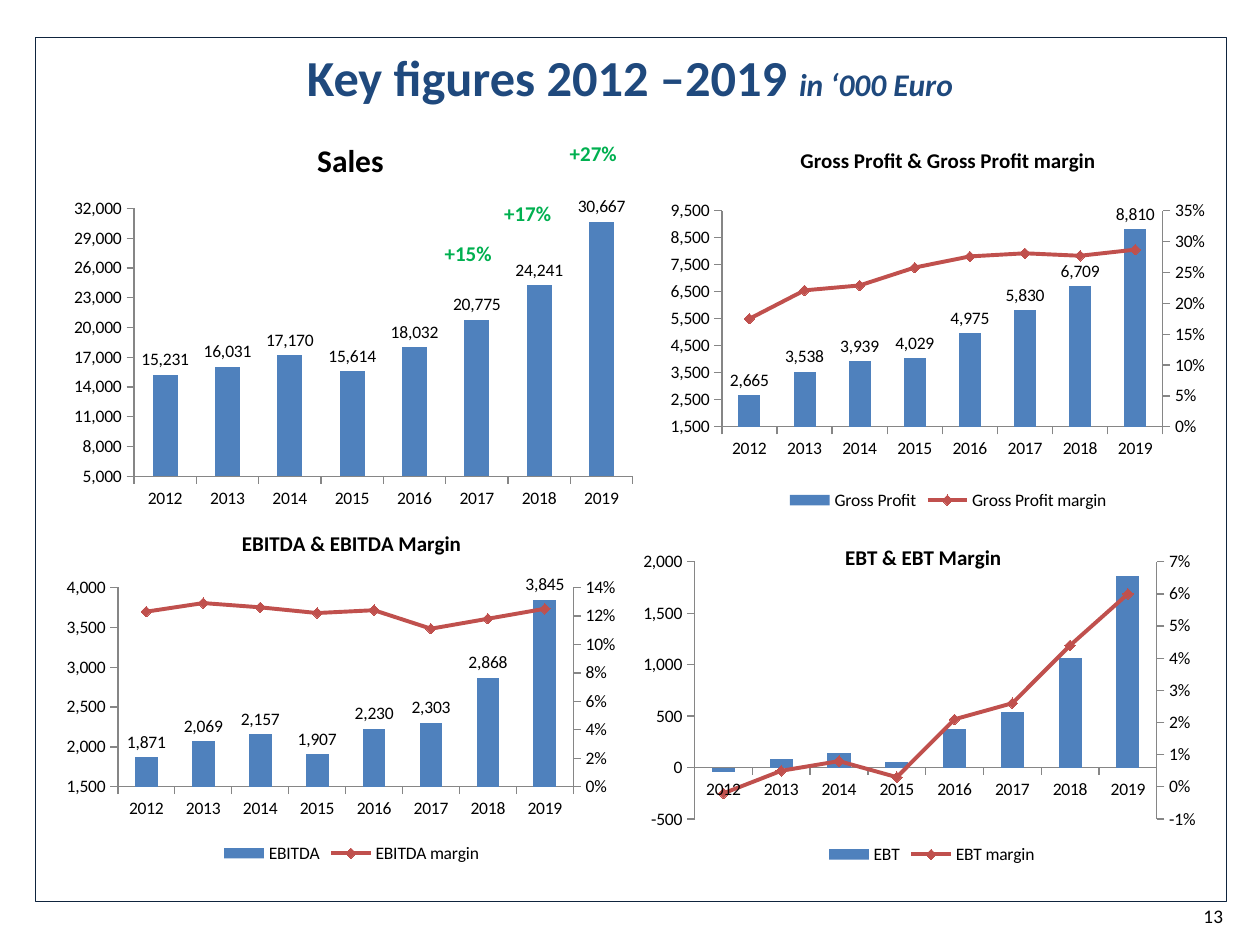
from pptx import Presentation
from pptx.chart.axis import ValueAxis
from pptx.chart.data import CategoryChartData
from pptx.dml.color import RGBColor
from pptx.enum.chart import (XL_CHART_TYPE, XL_LABEL_POSITION,
                             XL_LEGEND_POSITION, XL_MARKER_STYLE)
from pptx.enum.shapes import MSO_SHAPE
from pptx.enum.text import MSO_ANCHOR, MSO_AUTO_SIZE, PP_ALIGN
from pptx.oxml import parse_xml
from pptx.oxml.ns import nsdecls, qn
from pptx.util import Pt

FONT = "Calibri"
YEARS = [str(year) for year in range(2012, 2020)]
INNER = (0.107, 0.213, 0.766, 0.559)
BLUE, RED, GREY = "4F81BD", "C0504D", "868686"

RIGHT_AXES = (
    """<c:valAx %s><c:axId val="9002"/>
    <c:scaling><c:orientation val="minMax"/></c:scaling><c:delete val="0"/>
    <c:axPos val="r"/><c:numFmt formatCode="0%%" sourceLinked="0"/>
    <c:majorTickMark val="out"/><c:minorTickMark val="none"/>
    <c:tickLblPos val="nextTo"/><c:crossAx val="9001"/>
    <c:crosses val="max"/></c:valAx>""",
    """<c:catAx %s><c:axId val="9001"/>
    <c:scaling><c:orientation val="minMax"/></c:scaling><c:delete val="1"/>
    <c:axPos val="b"/><c:crossAx val="9002"/></c:catAx>""",
)
LINE_PLOT = """<c:lineChart %s><c:grouping val="standard"/>
    <c:varyColors val="0"/><c:marker val="1"/>
    <c:axId val="9001"/><c:axId val="9002"/></c:lineChart>"""


def color(code):
    return RGBColor.from_string(code)


def style(font, size, code, bold=False, italic=False):
    font.name, font.size = FONT, Pt(size)
    font.bold, font.italic = bold, italic
    font.color.rgb = color(code)


def make(xml):
    return parse_xml(xml % nsdecls("c"))


def arrange(parent, index, spot, inner=False):
    """Give a chart part a manual layout, as shares of the chart's box."""
    old = parent.find(qn("c:layout"))
    if old is not None:
        parent.remove(old)
    target = '<c:layoutTarget val="inner"/>' if inner else ""
    modes = "".join(f'<c:{k}Mode val="edge"/>' for k in "xy")
    sizes = "".join(f'<c:{k} val="{v}"/>' for k, v in zip("xywh", spot))
    parent.insert(index, make("<c:layout %s><c:manualLayout>" + target + modes
                              + sizes + "</c:manualLayout></c:layout>"))


def scale(axis, low, high, step):
    axis.minimum_scale, axis.maximum_scale = low, high
    axis.major_unit = step
    axis.has_major_gridlines = False


def rule(axis):
    axis.format.line.color.rgb = color(GREY)
    axis.format.line.width = Pt(0.75)


def add_margin(chart, span):
    """Turn the second series into a line on a right-hand axis."""
    area = chart.plots[0]._element.getparent()
    bars = area.find(qn("c:barChart"))
    ser = bars.findall(qn("c:ser"))[1]
    invert = ser.find(qn("c:invertIfNegative"))
    if invert is not None:
        ser.remove(invert)
    plot = make(LINE_PLOT)
    plot.insert(2, ser)
    bars.addnext(plot)
    last = area.findall(qn("c:valAx"))[-1]
    for xml in reversed(RIGHT_AXES):
        last.addnext(make(xml))
    right = ValueAxis(area.findall(qn("c:valAx"))[-1])
    scale(right, *span)
    rule(right)

    line = chart.plots[1].series[0]
    line.smooth = False
    line.format.line.color.rgb = color(RED)
    line.format.line.width = Pt(2.25)
    line.marker.style, line.marker.size = XL_MARKER_STYLE.DIAMOND, 6
    line.marker.format.fill.solid()
    line.marker.format.fill.fore_color.rgb = color(RED)
    line.marker.format.line.color.rgb = color(RED)


def add_figure(slide, box, title, name, values, span, margin=None,
               right=None, size=12, plot=INNER, labels=True, spot=None):
    data = CategoryChartData(number_format="#,##0")
    data.categories = YEARS
    data.add_series(name, values)
    if margin:
        data.add_series(name + " margin", margin, number_format="0%")
    chart = slide.shapes.add_chart(XL_CHART_TYPE.COLUMN_CLUSTERED,
                                   *map(Pt, box), data).chart
    style(chart.font, 10, "000000")

    # Title
    frame = chart.chart_title.text_frame
    frame.text = title
    style(frame.paragraphs[0].runs[0].font, size, "000000", bold=True)
    head = chart.chart_title._element
    if margin:
        head.find(qn("c:overlay")).set("val", "1")
    if spot:
        arrange(head, 1, spot)

    # Columns and axes
    bars = chart.plots[0]
    arrange(bars._element.getparent(), 0, plot, inner=True)
    bars.gap_width, bars.vary_by_categories = 150, False
    fill = bars.series[0].format.fill
    fill.solid()
    fill.fore_color.rgb = color(BLUE)
    bars.series[0].invert_if_negative = False
    if labels:
        tags = bars.series[0].data_labels
        tags.show_value = True
        tags.number_format, tags.number_format_is_linked = "#,##0", False
        tags.position = XL_LABEL_POSITION.OUTSIDE_END
    scale(chart.value_axis, *span)
    chart.value_axis.tick_labels.number_format = "#,##0"
    chart.value_axis.tick_labels.number_format_is_linked = False
    rule(chart.value_axis)
    rule(chart.category_axis)

    # Margin line and legend
    chart.has_legend = bool(margin)
    if margin:
        add_margin(chart, right)
        chart.legend.position = XL_LEGEND_POSITION.BOTTOM
        chart.legend.include_in_layout = False


def add_note(slide, box, text, size, code, bold=False, align=PP_ALIGN.LEFT):
    frame = slide.shapes.add_textbox(*map(Pt, box)).text_frame
    frame.word_wrap = False
    frame.auto_size = MSO_AUTO_SIZE.SHAPE_TO_FIT_TEXT
    frame.text = text
    frame.paragraphs[0].alignment = align
    style(frame.paragraphs[0].runs[0].font, size, code, bold)


def add_frame(slide, box):
    frame = slide.shapes.add_shape(MSO_SHAPE.RECTANGLE, *map(Pt, box))
    frame.shadow.inherit = False
    frame.fill.background()
    frame.line.color.rgb = color("0F243E")
    frame.line.width = Pt(0.25)


def add_title(slide, box):
    title = slide.shapes.title
    title.left, title.top, title.width, title.height = map(Pt, box)
    frame = title.text_frame
    frame.auto_size = MSO_AUTO_SIZE.NONE
    frame.vertical_anchor = MSO_ANCHOR.MIDDLE
    para = frame.paragraphs[0]
    para.alignment = PP_ALIGN.CENTER
    for text, size, slant in (("Key figures 2012 –2019 ", 28.8, False),
                              ("in ‘000 Euro", 18, True)):
        run = para.add_run()
        run.text = text
        style(run.font, size, "1F497D", True, slant)


def main():
    deck = Presentation()
    deck.slide_width, deck.slide_height = Pt(720), Pt(540)
    slide = deck.slides.add_slide(deck.slide_layouts[5])
    add_frame(slide, (20, 21, 680.5, 494))
    add_title(slide, (36, 21.6, 648, 44))
    add_note(slide, (538, 513.4, 168, 28.8), "13", 11, "000000",
             align=PP_ALIGN.RIGHT)

    # Four charts
    add_figure(slide, (377.3, 73.4, 329, 221),
               "Gross Profit & Gross Profit margin", "Gross Profit",
               (2665, 3538, 3939, 4029, 4975, 5830, 6709, 8810),
               (1500, 9500, 1000),
               (0.175, 0.221, 0.229, 0.258, 0.276, 0.281, 0.277, 0.287),
               (0, 0.35, 0.05))
    add_figure(slide, (31, 292.3, 339.8, 203.8),
               "EBITDA & EBITDA Margin", "EBITDA",
               (1871, 2069, 2157, 1907, 2230, 2303, 2868, 3845),
               (1500, 4000, 500),
               (0.123, 0.129, 0.126, 0.122, 0.124, 0.111, 0.118, 0.125),
               (0, 0.14, 0.02))
    add_figure(slide, (360, 287.3, 344.9, 209.5), "EBT & EBT Margin", "EBT",
               (-40, 80, 140, 50, 370, 540, 1060, 1860), (-500, 2000, 500),
               (-0.002, 0.005, 0.008, 0.003, 0.021, 0.026, 0.044, 0.06),
               (-0.01, 0.07, 0.01), plot=(0.107, 0.161, 0.766, 0.702),
               labels=False, spot=(0.35, 0.1))
    add_figure(slide, (36, 67.7, 332.6, 227.5), "Sales ", "Sales ",
               (15231, 16031, 17170, 15614, 18032, 20775, 24241, 30667),
               (5000, 32000, 3000), size=18,
               plot=(0.122, 0.226, 0.857, 0.673))

    # Sales growth
    for left, top, text in ((247, 134, "+15%"), (281, 111, "+17%"),
                            (318.5, 77, "+27%")):
        add_note(slide, (left, top, 42, 21.8), text, 12, "00B050", bold=True)
    deck.save("out.pptx")


if __name__ == "__main__":
    main()
